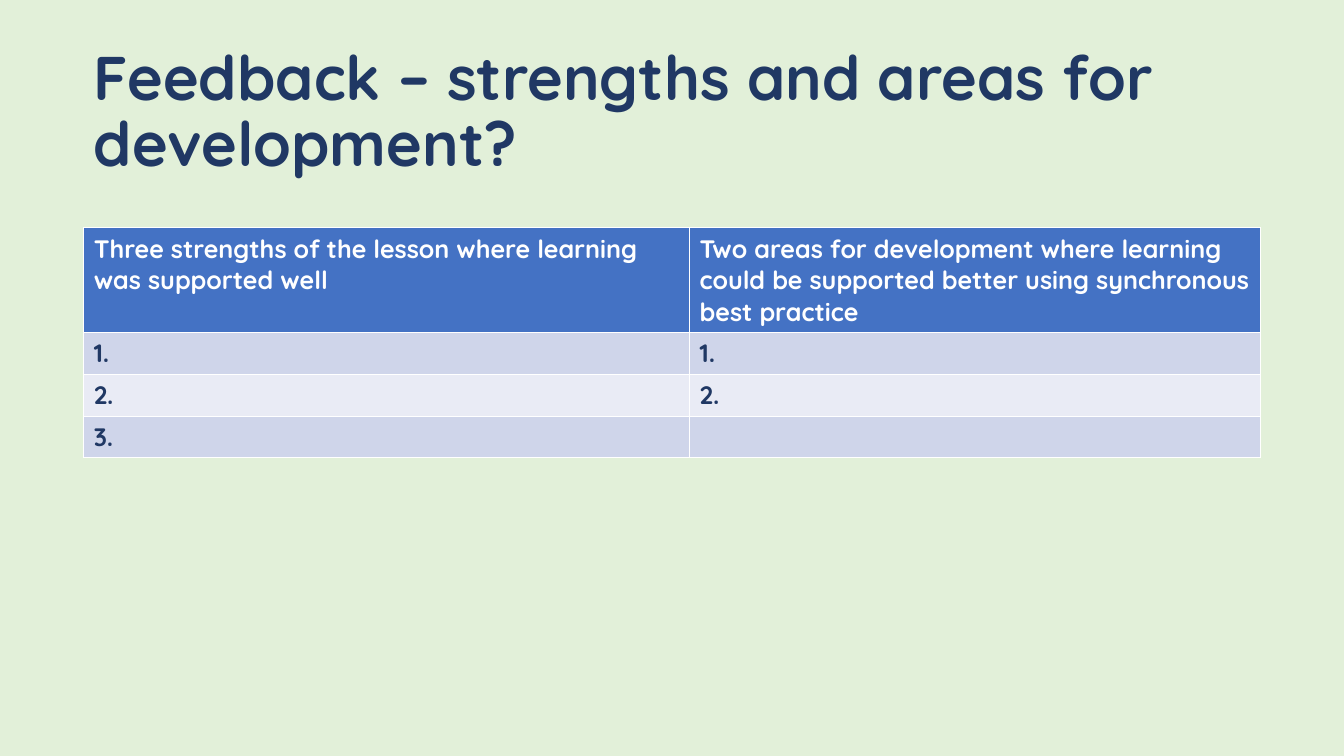
"""Build the lesson feedback slide with its strengths and development table."""
from pptx import Presentation
from pptx.dml.color import RGBColor
from pptx.enum.text import MSO_ANCHOR, MSO_AUTO_SIZE, PP_ALIGN
from pptx.util import Inches, Pt

NAVY = "203864"
WHITE = "FFFFFF"


def paint(color_format, hex_color):
    color_format.rgb = RGBColor.from_string(hex_color)


def style_text(paragraph, size, hex_color):
    paragraph.alignment = PP_ALIGN.LEFT
    for run in paragraph.runs:
        run.font.name = "Quicksand"
        run.font.size = Pt(size)
        run.font.bold = True
        paint(run.font.color, hex_color)


presentation = Presentation()
presentation.slide_width = Inches(13.33)
presentation.slide_height = Inches(7.5)
slide = presentation.slides.add_slide(presentation.slide_layouts[5])
slide.background.fill.solid()
paint(slide.background.fill.fore_color, "E2F0D9")

heading = slide.shapes.title
heading.left, heading.top = Inches(0.83), Inches(0.4)
heading.width, heading.height = Inches(11.58), Inches(1.45)
heading.text_frame.text = "Feedback – strengths and areas for development?"
heading.text_frame.word_wrap = True
heading.text_frame.auto_size = MSO_AUTO_SIZE.NONE
heading.text_frame.vertical_anchor = MSO_ANCHOR.MIDDLE
heading.text_frame.paragraphs[0].line_spacing = 0.9
style_text(heading.text_frame.paragraphs[0], 44, NAVY)

feedback_rows = [
    ("Three strengths of the lesson where learning was supported well",
     "Two areas for development where learning could be supported better "
     "using synchronous best practice"),
    ("1.", "1."),
    ("2.", "2."),
    ("3.", ""),
]
row_fills = ["4472C4", "CFD5EA", "E9EBF5", "CFD5EA"]
row_heights = [1.04, 0.41, 0.41, 0.41]
column_widths = [6.01, 5.66]

feedback = slide.shapes.add_table(
    len(feedback_rows), len(column_widths), Inches(0.83), Inches(2.26),
    Inches(sum(column_widths)), Inches(sum(row_heights))).table
for column, width in zip(feedback.columns, column_widths):
    column.width = Inches(width)

for index, (row, entries) in enumerate(zip(feedback.rows, feedback_rows)):
    row.height = Inches(row_heights[index])
    for cell, entry in zip(row.cells, entries):
        cell.fill.solid()
        paint(cell.fill.fore_color, row_fills[index])
        cell.text_frame.text = entry
        style_text(cell.text_frame.paragraphs[0], 18, NAVY if index else WHITE)

presentation.save("out.pptx")
